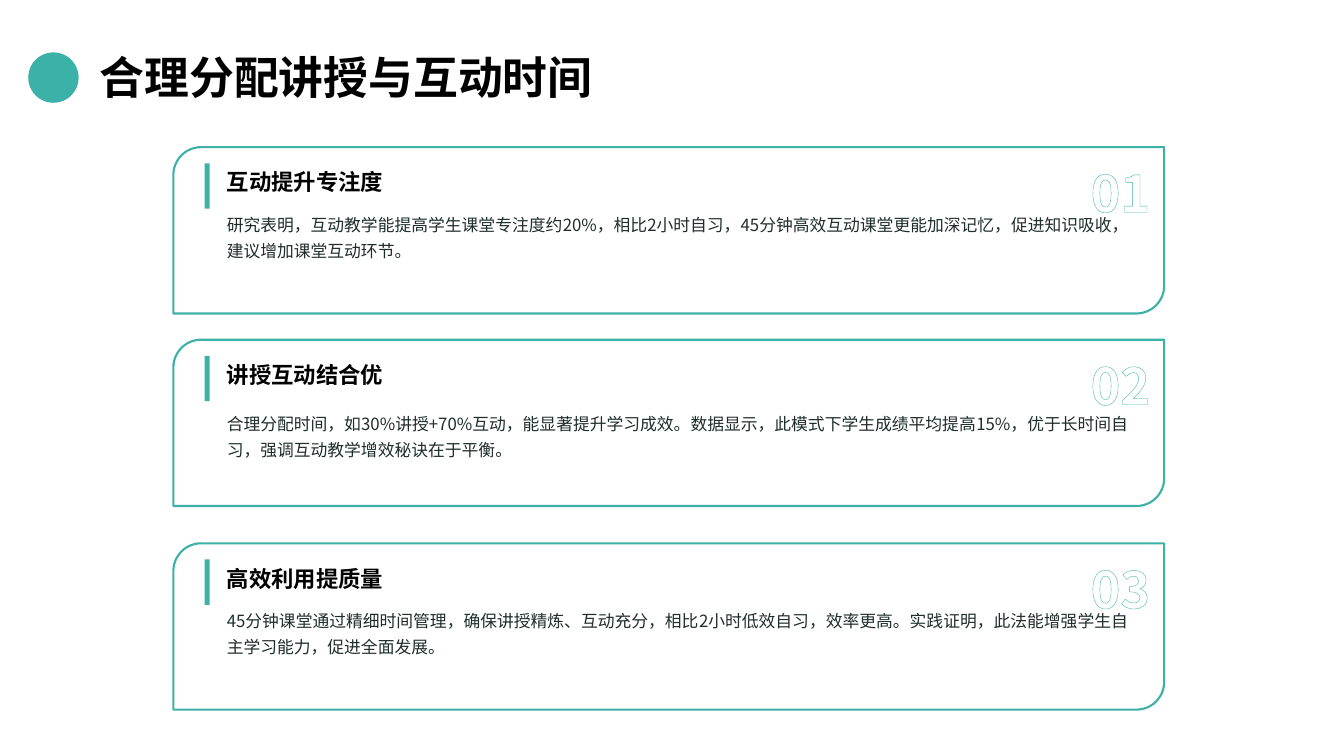
from dataclasses import dataclass

from lxml import etree
from pptx import Presentation
from pptx import util as u
from pptx.dml import color
from pptx.enum import shapes, text
from pptx.oxml import ns

Pt = u.Pt


@dataclass(frozen=True)
class Theme:
    face: str = "Noto Sans CJK SC"
    teal: str = "3CB1A8"
    white: str = "FFFFFF"
    black: str = "000000"
    ink: str = "1F2D2B"
    title: int = 32
    head: int = 16
    body: int = 12
    digit: int = 36


THEME = Theme()
LEFT = 123.84
CARDS = [
    (105.12, 43.92, "互动提升专注度",
     "研究表明，互动教学能提高学生课堂专注度约20%，相比2小时自习，"
     "45分钟高效互动课堂更能加深记忆，促进知识吸收，建议增加课堂互动环节。"),
    (242.64, 48.24, "讲授互动结合优",
     "合理分配时间，如30%讲授+70%互动，能显著提升学习成效。"
     "数据显示，此模式下学生成绩平均提高15%，优于长时间自习，"
     "强调互动教学增效秘诀在于平衡。"),
    (388.08, 43.92, "高效利用提质量",
     "45分钟课堂通过精细时间管理，确保讲授精炼、互动充分，"
     "相比2小时低效自习，效率更高。实践证明，此法能增强学生自主学习能力，"
     "促进全面发展。"),
]


def rgb(code):
    return color.RGBColor.from_string(code)


def add_form(slide, kind, box, fill, line=None):
    form = slide.shapes.add_shape(kind, *map(Pt, box))
    form.shadow.inherit = False
    form.fill.solid()
    form.fill.fore_color.rgb = rgb(fill)
    if line:
        form.line.color.rgb = rgb(line)
        form.line.width = Pt(1.5)
    else:
        form.line.fill.background()
    return form


def add_text(slide, box, words, size, ink, bold=False, inset=(0, 0), middle=True):
    frame = slide.shapes.add_textbox(*map(Pt, box)).text_frame
    frame.word_wrap = True
    frame.margin_left = frame.margin_right = Pt(inset[0])
    frame.margin_top = frame.margin_bottom = Pt(inset[1])
    anchor = text.MSO_ANCHOR
    frame.vertical_anchor = anchor.MIDDLE if middle else anchor.TOP
    frame.text = words
    para = frame.paragraphs[0]
    font = para.runs[0].font
    font.size = Pt(size)
    font.bold = bold
    font.color.rgb = rgb(ink)
    font.name = THEME.face
    props = para.runs[0]._r.get_or_add_rPr()
    etree.SubElement(props, ns.qn("a:ea"), typeface=THEME.face)
    return para


def outline(para, ink):
    line = etree.Element(ns.qn("a:ln"), w=str(Pt(1)))
    fill = etree.SubElement(line, ns.qn("a:solidFill"))
    etree.SubElement(fill, ns.qn("a:srgbClr"), val=ink)
    para.runs[0]._r.get_or_add_rPr().insert(0, line)


def add_card(slide, number, top, drop, head, body):
    kind = shapes.MSO_SHAPE
    add_form(slide, kind.ROUND_2_DIAG_RECTANGLE, (LEFT, top, 707.76, 118.8),
             THEME.white, THEME.teal)
    para = add_text(slide, (LEFT + 38.16, top + drop, 653.04, 64.8), body,
                    THEME.body, THEME.ink, middle=False)
    para.line_spacing = 1.3
    para.space_before = para.space_after = Pt(3)
    digit = add_text(slide, (LEFT + 606.24, top + 2.88, 91.44, 58.32),
                     f"{number:02}", THEME.digit, THEME.white, bold=True)
    digit.alignment = text.PP_ALIGN.RIGHT
    outline(digit, THEME.teal)
    add_form(slide, kind.RECTANGLE, (LEFT + 22.32, top + 11.52, 3.6, 32.4), THEME.teal)
    add_text(slide, (LEFT + 38.16, top + 10.08, 586.08, 29.52), head,
             THEME.head, THEME.black, bold=True)


def add_title(slide, words):
    dot = add_form(slide, shapes.MSO_SHAPE.OVAL, (20.16, 37.44, 36, 36), THEME.teal)
    dot.rotation = 45
    para = add_text(slide, (64.08, 22.32, 870.48, 56.88), words,
                    THEME.title, THEME.black, bold=True, inset=(7.2, 3.6))
    para.line_spacing = 1.2


def main():
    deck = Presentation()
    deck.slide_width, deck.slide_height = Pt(960), Pt(540)
    slide = deck.slides.add_slide(deck.slide_layouts[6])
    for number, card in enumerate(CARDS, 1):
        add_card(slide, number, *card)
    add_title(slide, "合理分配讲授与互动时间")
    deck.save("out.pptx")


if __name__ == "__main__":
    main()
